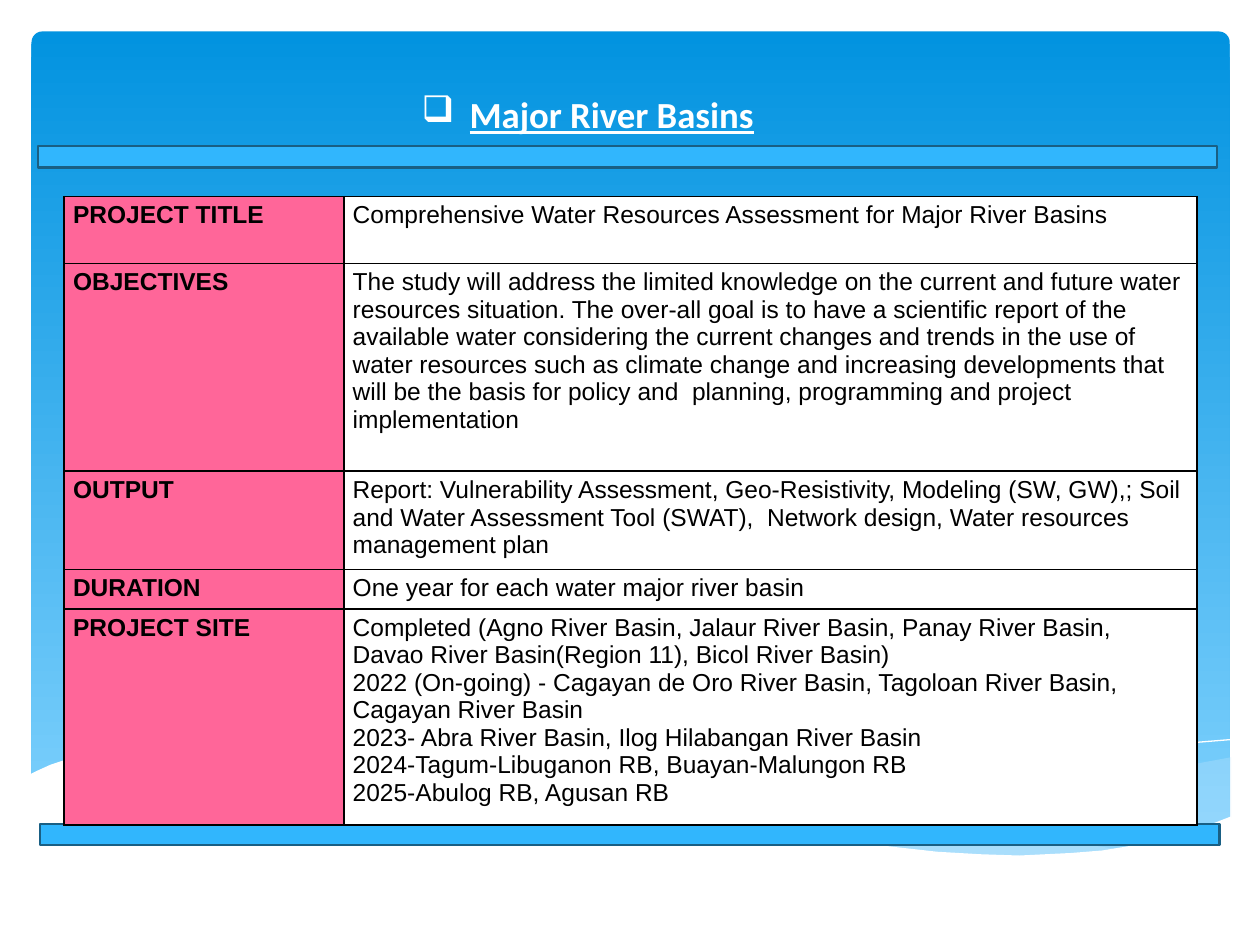
"""Build the Major River Basins project slide."""
from lxml import etree
from pptx import Presentation, util as u
from pptx.dml.color import RGBColor
from pptx.enum import shapes, text
from pptx.oxml import parse_xml
from pptx.oxml.ns import nsdecls, qn

THEME = dict(sky="0293E0", sky_low="83D3FE", wave="C6E7FC", white="FFFFFF", bar="31B6FD",
             bar_line="195F84", label="FF6699", ink="000000", title_pt=21, body_pt=14)

BACK_WAVE = [(9.77, 6.01), (9.5, 6.06), (9.22, 6.11), (8.92, 6.18), (8.62, 6.25), (8.06, 6.39),
             (7.54, 6.5), (7.07, 6.59), (6.62, 6.67), (6.92, 6.71), (7.19, 6.74), (7.46, 6.77),
             (7.82, 6.79), (8.15, 6.8), (8.45, 6.79), (8.73, 6.76), (8.98, 6.72), (9.22, 6.67),
             (9.44, 6.61), (9.64, 6.54), (9.77, 6.49)]
FRONT_WAVE = [(8.94, 6.75), (8.67, 6.71), (8.38, 6.67), (8.08, 6.62), (7.76, 6.56), (7.42, 6.49),
              (7.07, 6.42), (6.69, 6.33), (6.3, 6.24), (5.99, 6.16), (5.7, 6.1), (5.42, 6.04),
              (5.15, 6), (4.89, 5.96), (4.42, 5.91), (4, 5.88), (3.62, 5.87), (3.28, 5.89),
              (2.87, 5.93), (3.23, 5.98), (3.63, 6.04), (4.05, 6.13), (4.5, 6.24), (4.91, 6.34),
              (5.3, 6.42), (5.67, 6.5), (6.02, 6.57), (6.35, 6.63), (6.66, 6.68), (6.96, 6.72),
              (7.23, 6.76), (7.49, 6.78), (7.86, 6.8), (8.29, 6.8), (8.59, 6.79), (8.77, 6.77)]
LONG_LINE = [(3.1, 5.97), (3.29, 5.94), (3.53, 5.91), (3.88, 5.89), (4.33, 5.89), (4.69, 5.9),
             (5.11, 5.94), (5.57, 5.98), (6.09, 6.06), (6.66, 6.15), (7.28, 6.28), (7.96, 6.43),
             (8.7, 6.62), (9.08, 6.73)]
SHORT_LINE = [(6.14, 6.59), (6.53, 6.48), (6.96, 6.37), (7.49, 6.25), (8.07, 6.12), (8.67, 6),
              (8.97, 5.96), (9.25, 5.92), (9.52, 5.89), (9.76, 5.87)]
WHITE_WAVE = [(9.77, 6.48), (9.59, 6.55), (9.4, 6.61), (9.2, 6.67), (8.99, 6.71), (8.75, 6.75),
              (8.5, 6.77), (8.09, 6.79), (7.78, 6.78), (7.44, 6.76), (7.08, 6.72), (6.68, 6.67),
              (6.26, 6.6), (5.79, 6.51), (5.29, 6.41), (4.75, 6.29), (4.47, 6.22), (4.18, 6.15),
              (3.65, 6.04), (3.16, 5.96), (2.71, 5.9), (2.3, 5.87), (1.93, 5.86), (1.61, 5.86),
              (1.32, 5.88), (1.06, 5.91), (0.85, 5.95), (0.67, 5.99), (0.52, 6.03), (0.4, 6.07),
              (0.29, 6.12), (0.23, 6.15), (0.23, 7.31), (9.77, 7.31)]
ROWS = [
    (0.53, "PROJECT TITLE", ["Comprehensive Water Resources Assessment for Major River Basins"]),
    (1.65, "OBJECTIVES", [
        "The study will address the limited knowledge on the current and future water resources "
        "situation. The over-all goal is to have a scientific report of the available water "
        "considering the current changes and trends in the use of water resources such as climate "
        "change and increasing developments that will be the basis for policy and  planning, "
        "programming and project implementation"]),
    (0.73, "OUTPUT", [
        "Report: Vulnerability Assessment, Geo-Resistivity, Modeling (SW, GW),; Soil and Water "
        "Assessment Tool (SWAT),  Network design, Water resources management plan"]),
    (0.3, "DURATION", ["One year for each water major river basin"]),
    (1.6, "PROJECT SITE", [
        "Completed (Agno River Basin, Jalaur River Basin, Panay River Basin, "
        "Davao River Basin(Region 11), Bicol River Basin)",
        "2022 (On-going) - Cagayan de Oro River Basin, Tagoloan River Basin, Cagayan River Basin",
        "2023- Abra River Basin, Ilog Hilabangan River Basin",
        "2024-Tagum-Libuganon RB, Buayan-Malungon RB",
        "2025-Abulog RB, Agusan RB"]),
]


def rgb(name):
    return RGBColor.from_string(THEME[name])


def style_font(font, color, **values):
    font.color.rgb = rgb(color)
    for key, value in values.items():
        setattr(font, key, value)


prs = Presentation()
prs.slide_width, prs.slide_height = u.Inches(10), u.Inches(7.5)
s = prs.slides.add_slide(prs.slide_layouts[6])

sp = s.shapes.add_shape(shapes.MSO_SHAPE.ROUNDED_RECTANGLE,
                        u.Inches(0.25), u.Inches(0.25), u.Inches(9.51), u.Inches(6.6))
sp.adjustments[0] = 0.013
sp.shadow.inherit = False
sp.line.fill.background()
sp.fill.gradient()
sp.fill.gradient_angle = 270
for stop, color in zip(sp.fill.gradient_stops, ("sky", "sky_low")):
    stop.color.rgb = rgb(color)

for points, color, alpha in [(BACK_WAVE, "wave", 29), (FRONT_WAVE, "wave", 40),
                             (LONG_LINE, None, 100), (SHORT_LINE, None, 100),
                             (WHITE_WAVE, "white", 100)]:
    pts = [(u.Inches(x), u.Inches(y)) for x, y in points]
    fb = s.shapes.build_freeform(*pts[0], scale=1.0)
    fb.add_line_segments(pts[1:], close=color is not None)
    sp = fb.convert_to_shape()
    sp.shadow.inherit = False
    if color:
        sp.fill.solid()
        sp.fill.fore_color.rgb = rgb(color)
        sp.line.fill.background()
        clr = sp.fill._xPr.find(qn("a:solidFill"))[0]
        etree.SubElement(clr, qn("a:alpha"), val=str(alpha * 1000))
    else:
        sp.fill.background()
        sp.line.color.rgb = rgb("white")
        sp.line.width = u.Pt(0)

tf = s.shapes.add_textbox(u.Inches(0.3), u.Inches(0.6), u.Inches(8.73), u.Inches(0.53)).text_frame
tf.word_wrap = True
tf.vertical_anchor = text.MSO_ANCHOR.BOTTOM
p = tf.paragraphs[0]
p.alignment = text.PP_ALIGN.CENTER
pPr = p._p.get_or_add_pPr()
for key, value in dict(marL=0.38, indent=-0.38).items():
    pPr.set(key, str(u.Inches(value)))
etree.SubElement(pPr, qn("a:buChar"), char="❑")
r = p.add_run()
r.text = "Major River Basins"
style_font(r.font, "white", name="Calibri", size=u.Pt(THEME["title_pt"]), bold=True, underline=True)

for left, top in [(0.32, 6.54), (0.3, 1.16)]:
    sp = s.shapes.add_shape(shapes.MSO_SHAPE.RECTANGLE, u.Inches(left), u.Inches(top),
                            u.Inches(9.36), u.Inches(0.17))
    sp.shadow.inherit = False
    sp.fill.solid()
    sp.fill.fore_color.rgb = rgb("bar")
    sp.line.color.rgb = rgb("bar_line")
    sp.line.width = u.Pt(1.25)

height = sum(row[0] for row in ROWS)
table = s.shapes.add_table(len(ROWS), 2, u.Inches(0.51), u.Inches(1.56),
                           u.Inches(8.99), u.Inches(height)).table
table.first_row = table.horz_banding = False
for col, width in zip(table.columns, (2.22, 6.77)):
    col.width = u.Inches(width)
for i, (row_height, label, details) in enumerate(ROWS):
    table.rows[i].height = u.Inches(row_height)
    for j, (lines, fill) in enumerate([([label], "label"), (details, "white")]):
        cell = table.cell(i, j)
        for side, inset in dict(left=0.07, right=0.07, top=0.04, bottom=0.04).items():
            setattr(cell, f"margin_{side}", u.Inches(inset))
        tcPr = cell._tc.get_or_add_tcPr()
        for edge in "LRTB":
            tcPr.append(parse_xml(
                f'<a:ln{edge} {nsdecls("a")} w="{u.Pt(1)}"><a:solidFill>'
                f'<a:srgbClr val="{THEME["ink"]}"/></a:solidFill></a:ln{edge}>'))
        cell.fill.solid()
        cell.fill.fore_color.rgb = rgb(fill)
        cell.text_frame.text = "\n".join(lines)
        for p in cell.text_frame.paragraphs:
            style_font(p.runs[0].font, "ink", name="Arial", size=u.Pt(THEME["body_pt"]),
                       bold=j == 0)

prs.save("out.pptx")
